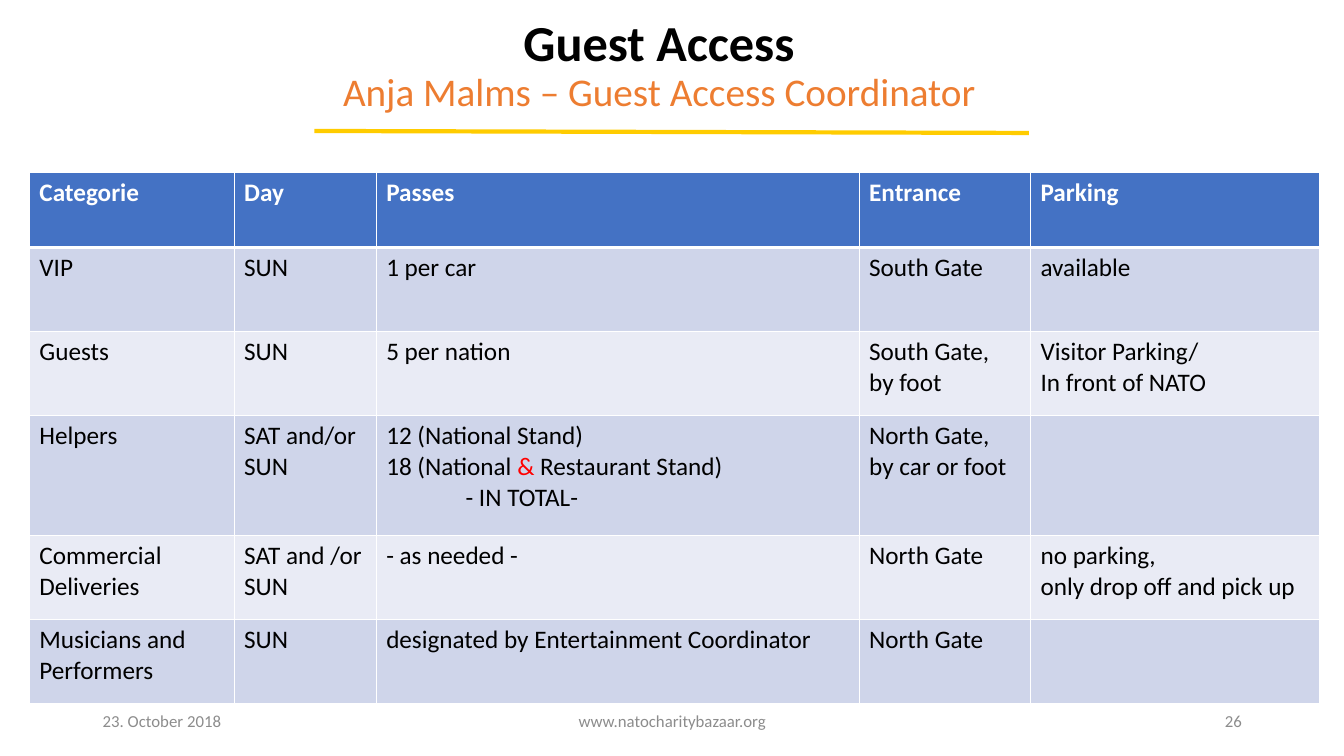
import dataclasses
import typing

import lxml.etree
import pptx
import pptx.dml.color
import pptx.enum.shapes
import pptx.enum.text
import pptx.oxml.ns
import pptx.util

Cm = pptx.util.Cm
Pt = pptx.util.Pt
ALIGN = pptx.enum.text.PP_ALIGN
ANCHOR = pptx.enum.text.MSO_ANCHOR

COLORS = {
    "white": "FFFFFF",
    "black": "000000",
    "header": "4472C4",
    "odd_row": "CFD5EA",
    "even_row": "E9EBF5",
    "rule": "FFCC00",
    "coordinator": "ED7D31",
    "ampersand": "FF0000",
    "footer": "8C8C8C",
}

FRAME_FORMAT = {
    "word_wrap": True,
    "auto_size": pptx.enum.text.MSO_AUTO_SIZE.NONE,
}


@dataclasses.dataclass
class FooterItem:
    text: str
    left: float
    width: float
    alignment: typing.Any


@dataclasses.dataclass
class AccessRow:
    height: float
    fill: str
    cells: tuple[str, ...]  # one line per paragraph


FOOTER = (
    FooterItem("23. October 2018", 2.34, 7.62, ALIGN.LEFT),
    FooterItem("www.natocharitybazaar.org", 11.23, 11.43, ALIGN.CENTER),
    FooterItem("26", 23.93, 7.62, ALIGN.RIGHT),
)

COLUMN_WIDTHS = (5.16, 3.58, 12.17, 4.32, 7.29)
TOTAL_LINE = "- IN TOTAL-"
ACCESS_ROWS = (
    AccessRow(1.9, "header", ("Categorie", "Day", "Passes", "Entrance", "Parking")),
    AccessRow(2.12, "odd_row", ("VIP", "SUN", "1 per car", "South Gate", "available")),
    AccessRow(2.12, "even_row", (
        "Guests", "SUN", "5 per nation", "South Gate,\nby foot",
        "Visitor Parking/\nIn front of NATO")),
    AccessRow(3.02, "odd_row", (
        "Helpers", "SAT and/or\nSUN",
        "12 (National Stand)\n18 (National & Restaurant Stand)\n" + TOTAL_LINE,
        "North Gate,\nby car or foot", "")),
    AccessRow(2.12, "even_row", (
        "Commercial Deliveries", "SAT and /or\nSUN", "- as needed -", "North Gate",
        "no parking,\nonly drop off and pick up")),
    AccessRow(2.12, "odd_row", (
        "Musicians and Performers", "SUN",
        "designated by Entertainment Coordinator", "North Gate", "")),
)


def rgb(name: str) -> pptx.dml.color.RGBColor:
    return pptx.dml.color.RGBColor.from_string(COLORS[name])


def apply_format(target: typing.Any, values: dict[str, typing.Any]) -> None:
    for attribute, value in values.items():
        setattr(target, attribute, value)


def add_run(paragraph: typing.Any, text: str, size: float, color: str,
            bold: bool = False) -> None:
    run = paragraph.add_run()
    run.text = text
    apply_format(run.font, {"name": "Calibri", "size": Pt(size), "bold": bold})
    run.font.color.rgb = rgb(color)


def set_borders(cell: typing.Any, widths: dict[str, float]) -> None:
    properties = cell._tc.get_or_add_tcPr()
    for side, width in widths.items():
        border = lxml.etree.SubElement(
            properties, pptx.oxml.ns.qn(f"a:ln{side}"), w=str(Pt(width)))
        solid = lxml.etree.SubElement(border, pptx.oxml.ns.qn("a:solidFill"))
        lxml.etree.SubElement(
            solid, pptx.oxml.ns.qn("a:srgbClr"), val=COLORS["white"])


def fill_cell(cell: typing.Any, text: str, row_index: int, fill: str) -> None:
    is_header = row_index == 0
    set_borders(cell, {"L": 1, "R": 1, "T": 3 if row_index == 1 else 1,
                       "B": 3 if is_header else 1})
    cell.fill.solid()
    cell.fill.fore_color.rgb = rgb(fill)
    for index, line in enumerate(text.split("\n") if text else ()):
        frame = cell.text_frame
        paragraph = frame.paragraphs[0] if index == 0 else frame.add_paragraph()
        if line == TOTAL_LINE:
            paragraph._p.get_or_add_pPr().set("marL", str(Cm(2)))
        before, ampersand, after = line.partition("&")
        color = "white" if is_header else "black"
        for part, part_color in (
                (before, color), (ampersand, "ampersand"), (after, color)):
            if part:
                add_run(paragraph, part, 18, part_color, is_header)


def add_title(slide: typing.Any) -> None:
    title = slide.shapes.title
    apply_format(title, {"left": Cm(3.91), "top": Cm(0.61),
                         "width": Cm(25.4), "height": Cm(2.41)})
    apply_format(title.text_frame,
                 FRAME_FORMAT | {"vertical_anchor": ANCHOR.BOTTOM})
    heading = title.text_frame.paragraphs[0]
    apply_format(heading, {"alignment": ALIGN.CENTER, "line_spacing": 0.9})
    add_run(heading, "Guest Access", 36, "black", True)
    heading.add_line_break()
    add_run(heading, "Anja Malms – Guest Access Coordinator", 28, "coordinator")


def add_rule(slide: typing.Any) -> None:
    rule = slide.shapes.add_connector(
        pptx.enum.shapes.MSO_CONNECTOR.STRAIGHT,
        Cm(7.92), Cm(3.3), Cm(25.93), Cm(3.35))
    rule.line.color.rgb = rgb("rule")
    rule.line.width = Pt(3)
    lxml.etree.SubElement(rule._element.spPr, pptx.oxml.ns.qn("a:effectLst"))


def add_access_table(slide: typing.Any) -> None:
    table = slide.shapes.add_table(
        len(ACCESS_ROWS), len(COLUMN_WIDTHS), Cm(0.74), Cm(4.34),
        Cm(sum(COLUMN_WIDTHS)), Cm(sum(row.height for row in ACCESS_ROWS))).table
    for column, width in zip(table.columns, COLUMN_WIDTHS):
        column.width = Cm(width)
    for row_index, access in enumerate(ACCESS_ROWS):
        table.rows[row_index].height = Cm(access.height)
        for column_index, text in enumerate(access.cells):
            fill_cell(table.cell(row_index, column_index), text,
                      row_index, access.fill)


def add_footer_item(slide: typing.Any, item: FooterItem) -> None:
    box = slide.shapes.add_textbox(
        Cm(item.left), Cm(17.65), Cm(item.width), Cm(1.02))
    apply_format(box.text_frame,
                 FRAME_FORMAT | {"vertical_anchor": ANCHOR.MIDDLE})
    paragraph = box.text_frame.paragraphs[0]
    paragraph.alignment = item.alignment
    add_run(paragraph, item.text, 12, "footer")


def main() -> None:
    presentation = pptx.Presentation()
    apply_format(presentation, {"slide_width": Cm(33.87), "slide_height": Cm(19.05)})
    slide = presentation.slides.add_slide(presentation.slide_layouts[5])

    # Heading with its rule
    add_title(slide)
    add_rule(slide)

    # Access rules by guest category
    add_access_table(slide)

    # Date, web address and page number
    for item in FOOTER:
        add_footer_item(slide, item)

    presentation.save("out.pptx")


if __name__ == "__main__":
    main()
